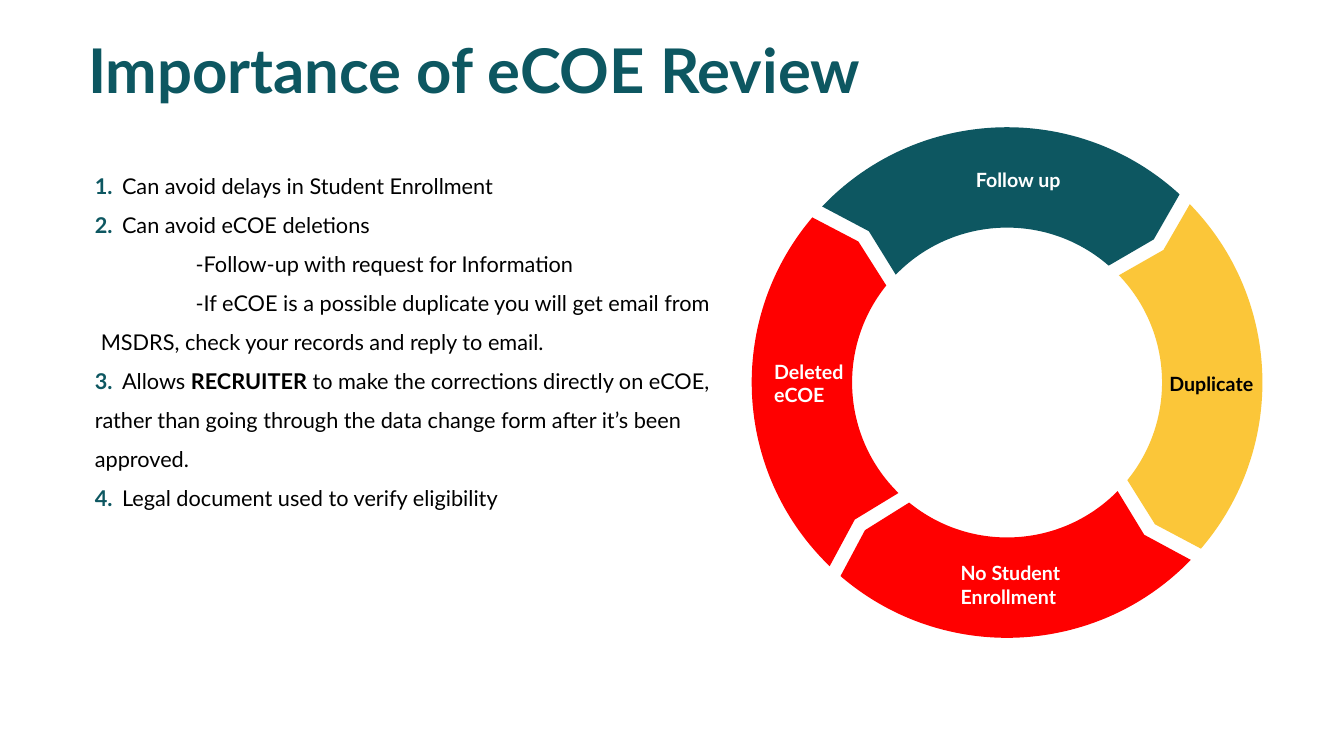
import math

import pptx
import pptx.dml.color
import pptx.enum.text
import pptx.oxml.ns
import pptx.oxml.xmlchemy
import pptx.util

WIDTH, HEIGHT = pptx.util.Inches(13.33), pptx.util.Inches(7.5)
FONT = "Lato"
COLORS = {"teal": "0D5761", "yellow": "FBC639", "red": "FF0000",
          "white": "FFFFFF", "black": "000000"}

# Ring centre as percentages of the slide, radii as percentages of its width
CENTER_X, CENTER_Y = WIDTH * 74.93 / 100, HEIGHT * 50.6 / 100
OUTER, MIDDLE, INNER = (WIDTH * share / 100 for share in (19, 15.25, 11.53))
RING_TURN = 43.7

# Colour, start angle and end angle in degrees, clockwise from the right
SEGMENTS = [
    ("teal", -136.4, -47.5),
    ("yellow", -44.3, 40.6),
    ("red", 134.0, 220.3),
    ("red", 44.0, 130.7),
]

# Text, colour and box as percentages of the slide
LABELS = [
    ("Follow up", "white", (71.87, 21.6, 15.45, 4.53)),
    ("No Student Enrollment", "white", (70.74, 73.6, 15.45, 10.27)),
    ("Duplicate", "black", (86.27, 48.53, 8.1, 4.53)),
    ("Deleted eCOE", "white", (56.86, 46.93, 7.65, 7.6)),
]

# Number and runs of each paragraph: text, bold
REASONS = [
    ("1.", [("Can avoid delays in Student Enrollment", False)]),
    ("2.", [("Can avoid eCOE deletions", False)]),
    (None, [("-Follow-up with request for Information", False)]),
    (None, [("-If eCOE is a possible duplicate you will get email from "
             "MSDRS, check your records and reply to email.", False)]),
    ("3.", [("Allows ", False), ("RECRUITER", True),
            (" to make the corrections directly on eCOE, rather than going "
             "through the data change form after it’s been approved.", False)]),
    ("4.", [("Legal document used to verify eligibility", False)]),
]


def rgb(name):
    return pptx.dml.color.RGBColor.from_string(COLORS[name])


def style_font(font, size, color, bold):
    font.name = FONT
    font.size = pptx.util.Pt(size)
    font.bold = bold
    font.color.rgb = rgb(color)


def add_text_frame(slide, box, anchor):
    """Add a wrapping text box; box is given in percentages of the slide."""
    left, top, width, height = box
    shape = slide.shapes.add_textbox(
        int(WIDTH * left / 100), int(HEIGHT * top / 100),
        int(WIDTH * width / 100), int(HEIGHT * height / 100))
    frame = shape.text_frame
    frame.word_wrap = True
    frame.vertical_anchor = anchor
    return frame


def add_line(slide, text, box, size, color, anchor, spacing=1.0):
    paragraph = add_text_frame(slide, box, anchor).paragraphs[0]
    paragraph.text = text
    paragraph.line_spacing = spacing
    style_font(paragraph.font, size, color, True)


def add_run(paragraph, text, color, bold):
    run = paragraph.add_run()
    run.text = text
    style_font(run.font, 15.5, color, bold)
    return run


def add_reasons(slide, box):
    frame = add_text_frame(slide, box, pptx.enum.text.MSO_ANCHOR.MIDDLE)
    for index, (number, runs) in enumerate(REASONS):
        paragraph = frame.add_paragraph() if index else frame.paragraphs[0]
        paragraph.line_spacing = 1.5
        if number:
            add_run(paragraph, number, "teal", True)
            gap = add_run(paragraph, " ", "teal", True)
            gap.font._element.set("spc", "300")
        else:
            properties = paragraph._p.get_or_add_pPr()
            properties.set("marL", str(pptx.util.Inches(0.06)))
            properties.set("indent", str(pptx.util.Inches(0.94)))
        for text, bold in runs:
            add_run(paragraph, text, "black", bold)


def turn(x, y, angle):
    """Turn a point about the ring centre."""
    cosine, sine = math.cos(math.radians(angle)), math.sin(math.radians(angle))
    across, down = x - CENTER_X, y - CENTER_Y
    return (round(CENTER_X + across * cosine - down * sine),
            round(CENTER_Y + across * sine + down * cosine))


def ring_point(radius, angle):
    return turn(CENTER_X + radius, CENTER_Y, angle - RING_TURN)


def arc(radius, start, end):
    """Return the four points of a cubic curve along the ring."""
    reach = 4 / 3 * math.tan(math.radians(end - start) / 4)
    control_radius = radius * math.hypot(1, reach)
    offset = math.degrees(math.atan(reach))
    return [ring_point(radius, start),
            ring_point(control_radius, start + offset),
            ring_point(control_radius, end - offset),
            ring_point(radius, end)]


def curve_lines(lines):
    """Join three line steps of a path into one cubic curve."""
    curve = pptx.oxml.xmlchemy.OxmlElement("a:cubicBezTo")
    lines[0].addprevious(curve)
    for line in lines:
        curve.append(line[0])
        line.getparent().remove(line)


def add_segment(slide, color, start, end):
    """Add a ring segment with a notch at its start and a point at its end."""
    points = [*arc(OUTER, start, end),
              ring_point(MIDDLE, end + 3.2),
              *arc(INNER, end - 1.5, start + 0.5),
              ring_point(MIDDLE, start + 4)]
    builder = slide.shapes.build_freeform(*points[0])
    builder.add_line_segments(points[1:], close=True)
    shape = builder.convert_to_shape()
    lines = list(shape._element.iter(pptx.oxml.ns.qn("a:lnTo")))
    curve_lines(lines[0:3])
    curve_lines(lines[5:8])

    middle_x, middle_y = turn(shape.left + shape.width / 2,
                              shape.top + shape.height / 2, RING_TURN)
    shape.left = round(middle_x - shape.width / 2)
    shape.top = round(middle_y - shape.height / 2)
    shape.rotation = RING_TURN
    shape.shadow.inherit = False
    shape.fill.solid()
    shape.fill.fore_color.rgb = rgb(color)
    shape.line.fill.background()


def main():
    presentation = pptx.Presentation()
    presentation.slide_width, presentation.slide_height = WIDTH, HEIGHT
    slide = presentation.slides.add_slide(presentation.slide_layouts[6])
    anchors = pptx.enum.text.MSO_ANCHOR

    add_line(slide, "Importance of eCOE Review", (5.81, 3.47, 71.72, 12.4),
             44, "teal", anchors.MIDDLE, spacing=0.9)
    for color, start, end in SEGMENTS:
        add_segment(slide, color, start, end)
    for text, color, box in LABELS:
        add_line(slide, text, box, 14, color, anchors.TOP)
    add_reasons(slide, (6.32, 20.5, 51.84, 47.73))

    presentation.save("out.pptx")


if __name__ == "__main__":
    main()
